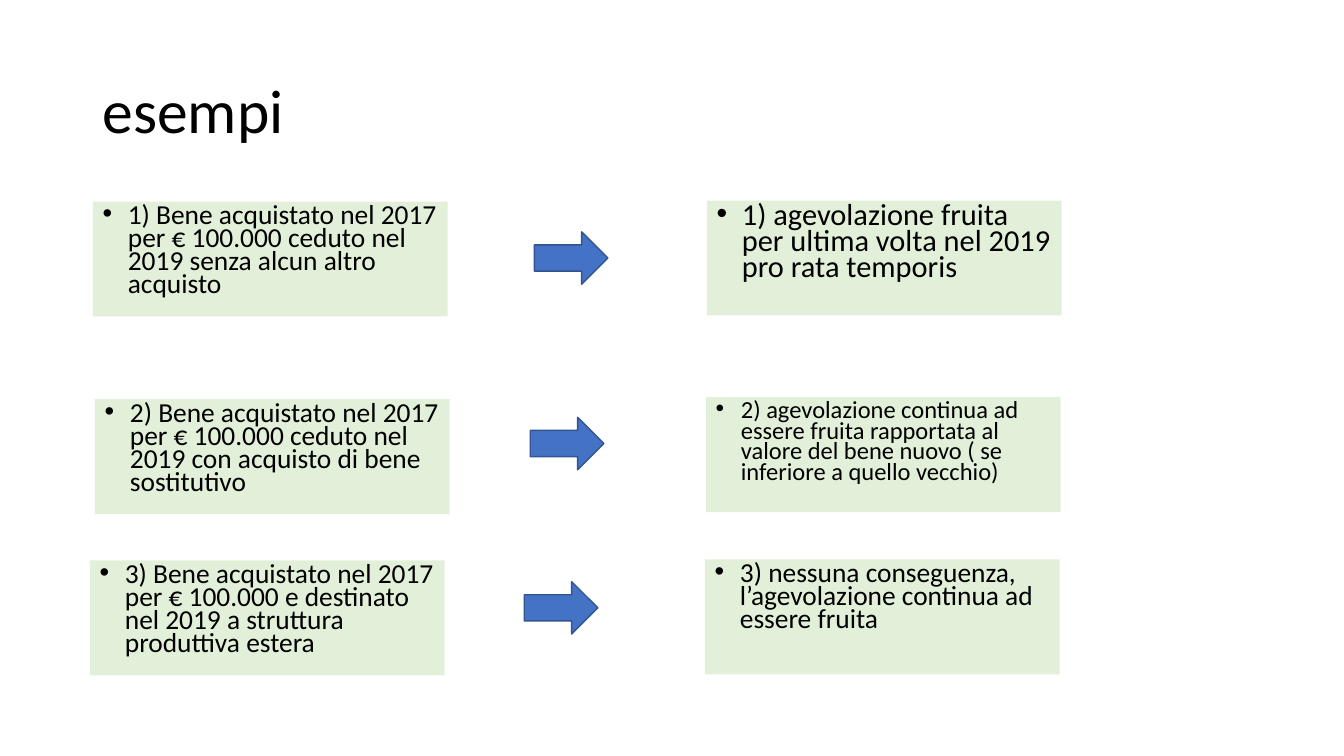
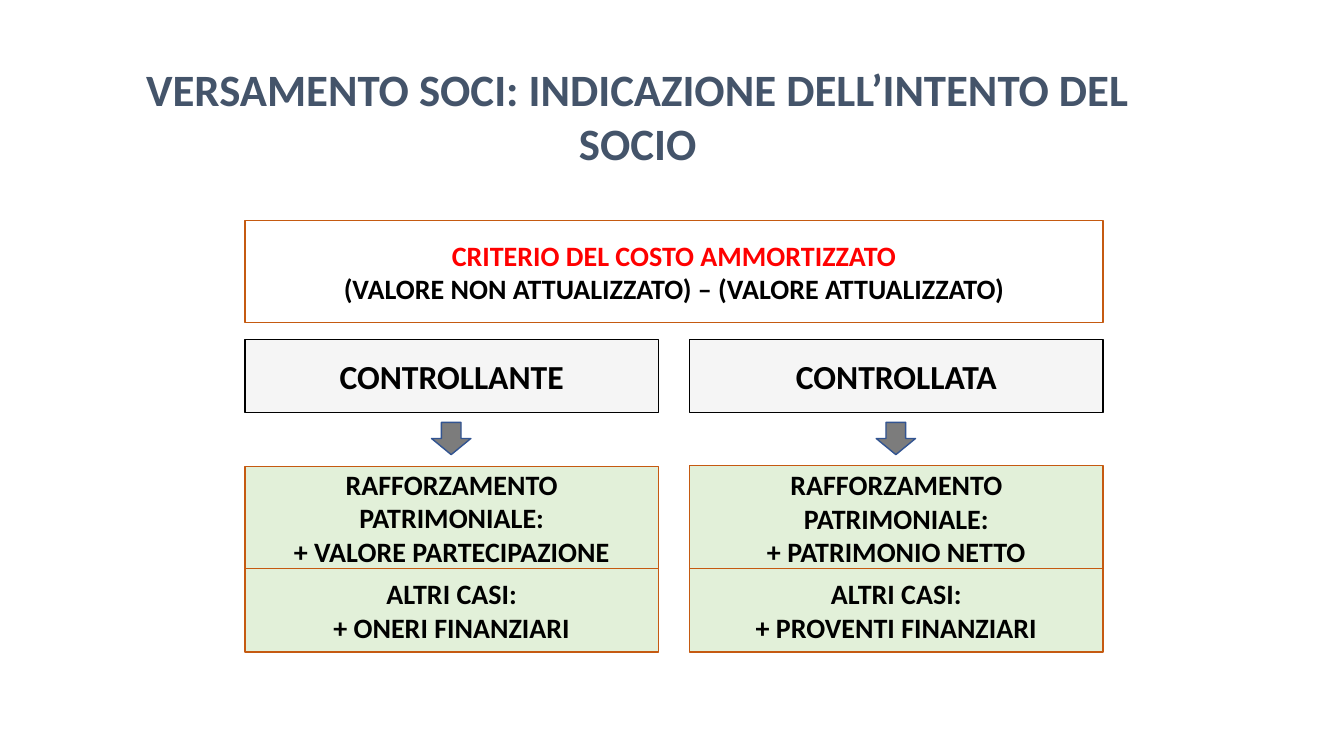
"""Build two slides: worked examples and accounting for partner payments."""
from lxml.etree import SubElement
from pptx import Presentation
from pptx.dml.color import RGBColor
from pptx.enum.shapes import MSO_SHAPE as SHAPE
from pptx.enum.text import MSO_ANCHOR, PP_ALIGN
from pptx.oxml.ns import qn
from pptx.util import Inches, Pt

THEME = {
    "font": "Calibri", "ink": "000000", "slate": "44546A", "red": "FF0000",
    "green": "E2F0D9", "blue": "4472C4", "navy": "325491", "pale": "F5F5F5",
    "gray": "7C7C7C", "rust": "C55A11", "white": "FFFFFF",
    "title": 44, "banner": 32, "head": 24, "body": 20, "item": 19.6,
}
WIDE, HIGH = 13.33, 7.5

CASES = [
    {"left": (0.92, 2), "arrow": (5.3, 2.3), "right": (7.01, 1.99), "size": 21.7,
     "cause": "1) Bene acquistato nel 2017 per € 100.000 ceduto nel 2019 senza alcun altro acquisto",
     "effect": "1) agevolazione fruita per ultima volta nel 2019 pro rata temporis"},
    {"left": (0.94, 3.96), "arrow": (5.26, 4.14), "right": (7, 3.94), "size": 17.5,
     "cause": "2) Bene acquistato nel 2017 per € 100.000 ceduto nel 2019 con acquisto di bene sostitutivo",
     "effect": "2) agevolazione continua ad essere fruita rapportata al valore del bene nuovo ( se inferiore a quello vecchio)"},
    {"left": (0.89, 5.56), "arrow": (5.2, 5.77), "right": (6.99, 5.55), "size": THEME["item"],
     "cause": "3) Bene acquistato nel 2017 per € 100.000 e destinato nel 2019 a struttura produttiva estera",
     "effect": "3) nessuna conseguenza, l’agevolazione continua ad essere fruita"},
]
RULE = [("CRITERIO DEL COSTO AMMORTIZZATO", "red"),
        ("(VALORE NON ATTUALIZZATO) – (VALORE ATTUALIZZATO)", "ink")]
SIDES = [
    ("CONTROLLANTE", "+ VALORE PARTECIPAZIONE", "+ ONERI FINANZIARI", 4.63, 1.01),
    ("CONTROLLATA", "+ PATRIMONIO NETTO", "+ PROVENTI FINANZIARI", 4.62, 1.04),
]
CARD = (3.52, 1.14)
DART = (0.73, 0.52)
EDGE, COL, GAP = 2.43, 4.1, 0.31


def tint(name):
    return RGBColor.from_string(THEME[name])


def put(item, **vals):
    for key, val in vals.items():
        setattr(item, key, val)


def draw(slide, kind, area, fill, line=None):
    shape = slide.shapes.add_shape(kind, *map(Inches, area))
    shape.shadow.inherit = False
    shape.fill.solid()
    shape.fill.fore_color.rgb = tint(fill)
    if line:
        shape.line.color.rgb = tint(line)
        shape.line.width = Pt(1)
    else:
        shape.line.fill.background()
    return shape


def write(shape, lines, size, bold=False, align=PP_ALIGN.CENTER,
          anchor=MSO_ANCHOR.MIDDLE, **form):
    frame = shape.text_frame
    put(frame, word_wrap=True, vertical_anchor=anchor)
    for num, (text, ink) in enumerate(lines):
        para = frame.add_paragraph() if num else frame.paragraphs[0]
        put(para, alignment=align, **form)
        run = para.add_run()
        run.text = text
        put(run.font, name=THEME["font"], size=Pt(size), bold=bold)
        run.font.color.rgb = tint(ink)


def title(slide, area, text, size, ink="ink", **form):
    box = slide.shapes.add_textbox(*map(Inches, area))
    write(box, [(text, ink)], size, **form)


def bullet(para):
    props = para._p.get_or_add_pPr()
    props.set("marL", str(Inches(0.25)))
    props.set("indent", str(-Inches(0.25)))
    SubElement(props, qn("a:buFont")).set("typeface", "Arial")
    SubElement(props, qn("a:buChar")).set("char", "•")


def card(slide, spot, text, size):
    box = draw(slide, SHAPE.RECTANGLE, spot + CARD, "green")
    write(box, [(text, "ink")], size, align=PP_ALIGN.LEFT, anchor=MSO_ANCHOR.TOP,
          line_spacing=0.7, space_before=Pt(10))
    bullet(box.text_frame.paragraphs[0])


def panel(slide, area, lines, size, fill="green", line="rust"):
    box = draw(slide, SHAPE.RECTANGLE, area, fill, line)
    write(box, lines, size, bold=True)


def cases(slide):
    title(slide, (0.92, 0.4, 11.5, 1.45), "esempi", THEME["title"],
          align=PP_ALIGN.LEFT, line_spacing=0.9)
    for case in CASES:
        card(slide, case["left"], case["cause"], THEME["item"])
        draw(slide, SHAPE.RIGHT_ARROW, case["arrow"] + DART, "blue", "navy")
        card(slide, case["right"], case["effect"], case["size"])


def intent(slide):
    title(slide, (0.98, 0.35, 10.69, 1.59),
          "VERSAMENTO SOCI: INDICAZIONE DELL’INTENTO DEL SOCIO",
          THEME["banner"], "slate", bold=True)
    panel(slide, (EDGE, 2.19, 2 * COL + GAP, 1.01), RULE, THEME["body"], "white")
    for num, (head, gain, other, top, tall) in enumerate(SIDES):
        left = EDGE + num * (COL + GAP)
        panel(slide, (left, 3.37, COL, 0.72), [(head, "ink")], THEME["head"],
              "pale", "ink")
        draw(slide, SHAPE.DOWN_ARROW, (left + 1.85, 4.19, 0.39, 0.32), "gray", "navy")
        for lead, text, start, size in (
                ("RAFFORZAMENTO PATRIMONIALE:", gain, top, tall),
                ("ALTRI CASI:", other, 5.64, 0.83)):
            panel(slide, (left, start, COL, size), [(lead, "ink"), (text, "ink")],
                  THEME["body"])


def main():
    deck = Presentation()
    put(deck, slide_width=Inches(WIDE), slide_height=Inches(HIGH))
    for build in (cases, intent):
        build(deck.slides.add_slide(deck.slide_layouts[6]))
    deck.save("out.pptx")


if __name__ == "__main__":
    main()
